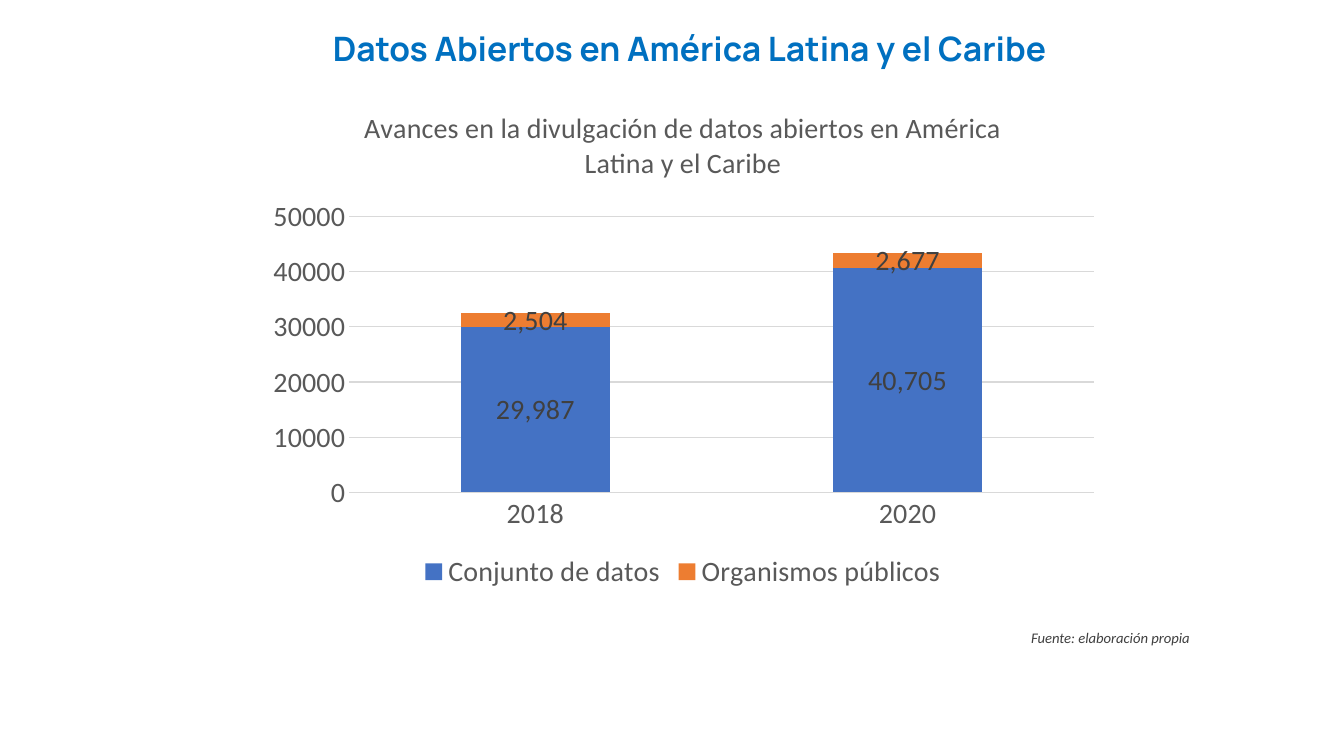
import pptx
import pptx.chart.data
import pptx.dml.color
import pptx.enum.chart
import pptx.enum.text
import pptx.oxml
import pptx.oxml.ns
import pptx.util

Pt = pptx.util.Pt
RGBColor = pptx.dml.color.RGBColor

BLUE_TITLE = RGBColor(0x00, 0x70, 0xC0)
BLUE = RGBColor(0x44, 0x72, 0xC4)
ORANGE = RGBColor(0xED, 0x7D, 0x31)
GRAY = RGBColor(0x59, 0x59, 0x59)
DARK = RGBColor(0x40, 0x40, 0x40)
LIGHT = RGBColor(0xD9, 0xD9, 0xD9)

TITLE = "Datos Abiertos en América Latina y el Caribe"
CHART_TITLE = "Avances en la divulgación de datos abiertos en América Latina y el Caribe"
CREDIT = "Fuente: elaboración propia"
YEARS = ["2018", "2020"]
SERIES = [
    ("Conjunto de datos", (29987, 40705), BLUE),
    ("Organismos públicos", (2504, 2677), ORANGE),
]

# left, top, width, height in points
TITLE_BOX = (218, 16.5, 549, 36)
CHART_BOX = (182.2, 62.6, 611.3, 362.2)
CREDIT_BOX = (729.4, 445.7, 129.6, 20)
# fractions of the chart area
PLOT_LAYOUT = {"x": 0.11, "y": 0.255, "w": 0.87, "h": 0.543}

TITLE_FONT = {"name": "Manrope", "size": Pt(24), "bold": True}
CHART_FONT = {"name": "Calibri", "size": Pt(20), "bold": False}
CREDIT_FONT = {"name": "Calibri", "size": Pt(10.5), "italic": True}


def format_font(font, values, color):
    for name, value in values.items():
        setattr(font, name, value)
    font.color.rgb = color


def in_points(box):
    return [Pt(value) for value in box]


def place_plot(chart):
    """Fix the inner plot area at PLOT_LAYOUT."""
    plot_area = chart._chartSpace.chart.plotArea
    for old in plot_area.findall(pptx.oxml.ns.qn("c:layout")):
        plot_area.remove(old)
    modes = '<c:layoutTarget val="inner"/><c:xMode val="edge"/><c:yMode val="edge"/>'
    sizes = "".join(f'<c:{key} val="{value}"/>' for key, value in PLOT_LAYOUT.items())
    plot_area.insert(0, pptx.oxml.parse_xml(
        f'<c:layout {pptx.oxml.ns.nsdecls("c")}>'
        f"<c:manualLayout>{modes}{sizes}</c:manualLayout></c:layout>"))


def add_title(slide):
    title = slide.shapes.title
    title.left, title.top, title.width, title.height = in_points(TITLE_BOX)
    frame = title.text_frame
    frame.text = TITLE
    frame.auto_size = pptx.enum.text.MSO_AUTO_SIZE.NONE
    frame.vertical_anchor = pptx.enum.text.MSO_ANCHOR.TOP
    paragraph = frame.paragraphs[0]
    paragraph.alignment = pptx.enum.text.PP_ALIGN.CENTER
    format_font(paragraph.runs[0].font, TITLE_FONT, BLUE_TITLE)


def add_data_chart(slide):
    data = pptx.chart.data.CategoryChartData(number_format="General")
    data.categories = YEARS
    for name, values, _ in SERIES:
        data.add_series(name, values)
    chart = slide.shapes.add_chart(
        pptx.enum.chart.XL_CHART_TYPE.COLUMN_STACKED, *in_points(CHART_BOX), data).chart
    format_font(chart.font, CHART_FONT, GRAY)

    chart.has_title = True
    chart.chart_title.include_in_layout = False
    chart.chart_title.text_frame.text = CHART_TITLE
    heading = chart.chart_title.text_frame.paragraphs[0]
    format_font(heading.runs[0].font, CHART_FONT, GRAY)

    chart.has_legend = True
    chart.legend.position = pptx.enum.chart.XL_LEGEND_POSITION.BOTTOM
    chart.legend.include_in_layout = False
    format_font(chart.legend.font, CHART_FONT, GRAY)

    for axis in (chart.category_axis, chart.value_axis):
        axis.major_tick_mark = axis.minor_tick_mark = pptx.enum.chart.XL_TICK_MARK.NONE
        format_font(axis.tick_labels.font, CHART_FONT, GRAY)
    chart.value_axis.format.line.fill.background()
    chart.value_axis.minimum_scale = 0
    chart.value_axis.maximum_scale = 50000
    chart.value_axis.major_unit = 10000
    chart.value_axis.has_major_gridlines = True
    for line in (chart.category_axis.format.line,
                 chart.value_axis.major_gridlines.format.line):
        line.color.rgb = LIGHT
        line.width = Pt(0.75)

    plot = chart.plots[0]
    plot.gap_width = 150
    plot.overlap = 100
    plot.vary_by_categories = False
    for series, (_, _, color) in zip(plot.series, SERIES):
        series.format.fill.solid()
        series.format.fill.fore_color.rgb = color
        labels = series.data_labels
        labels.show_value = True
        labels.number_format = "#,##0"
        labels.number_format_is_linked = False
        labels.position = pptx.enum.chart.XL_LABEL_POSITION.CENTER
        format_font(labels.font, CHART_FONT, DARK)
    place_plot(chart)


def add_credit(slide):
    frame = slide.shapes.add_textbox(*in_points(CREDIT_BOX)).text_frame
    frame.word_wrap = False
    frame.text = CREDIT
    format_font(frame.paragraphs[0].runs[0].font, CREDIT_FONT, DARK)


def main():
    presentation = pptx.Presentation()
    presentation.slide_width = Pt(960)
    presentation.slide_height = Pt(540)
    slide = presentation.slides.add_slide(presentation.slide_layouts[5])
    add_title(slide)
    add_data_chart(slide)
    add_credit(slide)
    presentation.save("out.pptx")


if __name__ == "__main__":
    main()
